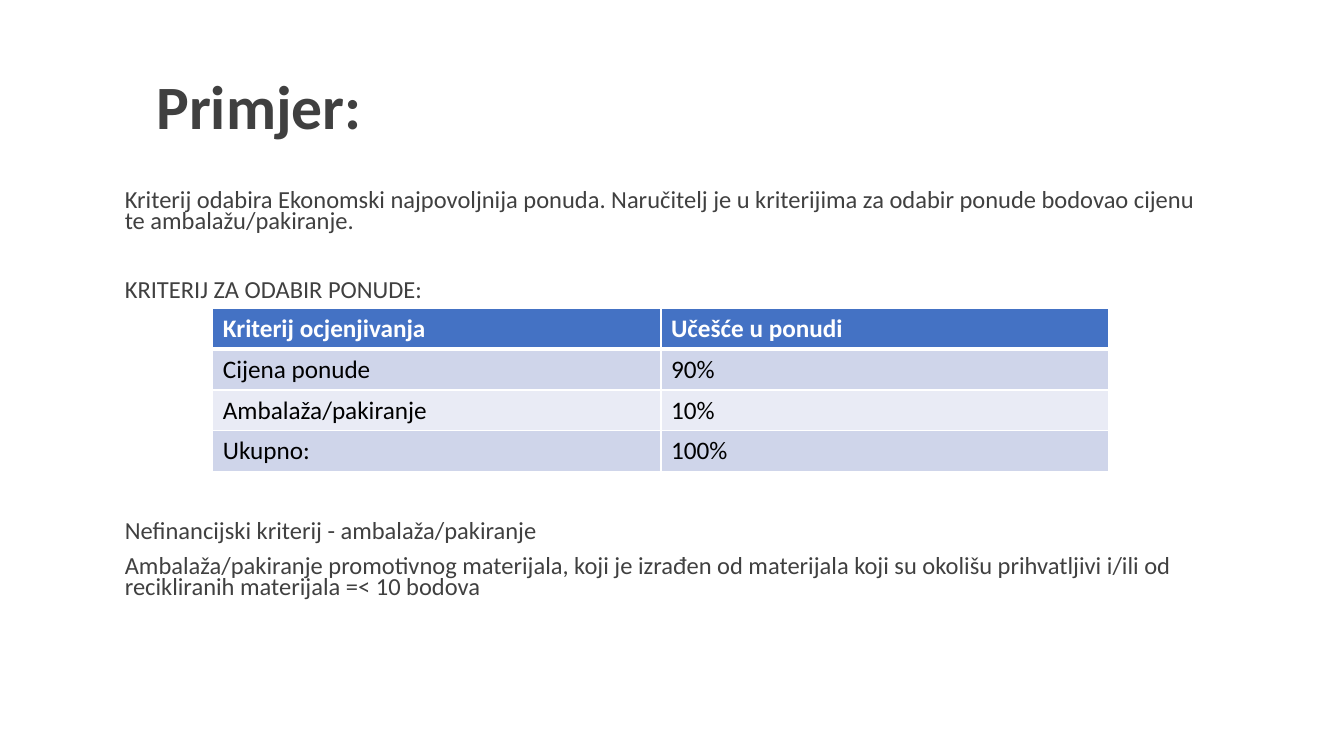
from dataclasses import dataclass

from lxml.etree import SubElement
from pptx import Presentation
from pptx.dml.color import RGBColor as Color
from pptx.enum.text import MSO_ANCHOR as Anchor, MSO_AUTO_SIZE as AutoSize, PP_ALIGN as Align
from pptx.oxml.ns import qn
from pptx.util import Inches, Pt


@dataclass(frozen=True)
class Theme:
    font: str = "Calibri"
    ink: str = "404040"
    table_ink: str = "000000"
    white: str = "FFFFFF"
    header: str = "4472C4"
    bands: tuple = ("CFD5EA", "E9EBF5")
    title_size: float = 44
    body_size: float = 17.5
    table_size: float = 18
    thin: float = 1
    thick: float = 3


def apply_format(target, values):
    for name, value in values.items():
        setattr(target, name, value)


class SlideBuilder:
    def __init__(self, deck, theme):
        self.deck = deck
        self.theme = theme
        self.page = deck.slides.add_slide(deck.slide_layouts[5])

    def area(self, left, top, width, height):
        """Turn percentages of the slide's size into lengths."""
        wide, high = self.deck.slide_width, self.deck.slide_height
        shares = zip((left, top, width, height), (wide, high, wide, high))
        return [round(share * side / 100) for share, side in shares]

    def add_text(self, para, text, size, color, bold=False, **layout):
        apply_format(para, {"alignment": Align.LEFT, **layout})
        span = para.add_run()
        span.text = text
        apply_format(span.font, {"name": self.theme.font, "size": Pt(size), "bold": bold})
        span.font.color.rgb = Color.from_string(color)

    def title(self, text, *shares):
        box = self.page.shapes.title
        apply_format(box, dict(zip(("left", "top", "width", "height"), self.area(*shares))))
        frame = box.text_frame
        apply_format(frame, {"vertical_anchor": Anchor.MIDDLE, "word_wrap": True,
                             "auto_size": AutoSize.NONE})
        self.add_text(frame.paragraphs[0], text, self.theme.title_size, self.theme.ink,
                      bold=True, line_spacing=0.9)

    def body(self, entries, *shares):
        """Place (space before in points, text) entries in one text box."""
        frame = self.page.shapes.add_textbox(*self.area(*shares)).text_frame
        frame.word_wrap = True
        for index, (gap, text) in enumerate(entries):
            para = frame.add_paragraph() if index else frame.paragraphs[0]
            self.add_text(para, text, self.theme.body_size, self.theme.ink,
                          line_spacing=0.7, space_before=Pt(gap))

    def borders(self, cell, top, bottom):
        properties = cell._tc.get_or_add_tcPr()
        thin = self.theme.thin
        for side, width in (("L", thin), ("R", thin), ("T", top), ("B", bottom)):
            line = SubElement(properties, qn(f"a:ln{side}"), w=str(Pt(width)))
            fill = SubElement(line, qn("a:solidFill"))
            SubElement(fill, qn("a:srgbClr"), val=self.theme.white)

    def table(self, rows, *shares):
        theme = self.theme
        left, top, width, height = self.area(*shares)
        grid = self.page.shapes.add_table(len(rows), len(rows[0]), left, top, width, height).table
        grid.horz_banding = False
        for row, texts in enumerate(rows):
            is_header = row == 0
            fill = theme.header if is_header else theme.bands[(row - 1) % len(theme.bands)]
            for column, text in enumerate(texts):
                cell = grid.cell(row, column)
                self.borders(cell, theme.thick if row == 1 else theme.thin,
                             theme.thick if is_header else theme.thin)
                cell.fill.solid()
                cell.fill.fore_color.rgb = Color.from_string(fill)
                self.add_text(cell.text_frame.paragraphs[0], text, theme.table_size,
                              theme.white if is_header else theme.table_ink, bold=is_header)


def main():
    deck = Presentation()
    apply_format(deck, {"slide_width": Inches(13.33), "slide_height": Inches(7.5)})
    slide = SlideBuilder(deck, Theme())
    slide.title("Primjer:", 10.88, 7.2, 78.24, 14.53)
    slide.body([
        (0, "Kriterij odabira Ekonomski najpovoljnija ponuda. Naručitelj je u kriterijima "
            "za odabir ponude bodovao cijenu te ambalažu/pakiranje."),
        (34.5, "KRITERIJ ZA ODABIR PONUDE:"),
        (158, "Nefinancijski kriterij - ambalaža/pakiranje"),
        (10, "Ambalaža/pakiranje promotivnog materijala, koji je izrađen od materijala "
             "koji su okolišu prihvatljivi i/ili od recikliranih materijala =< 10 bodova"),
    ], 8.55, 24.8, 82.9, 58.53)
    slide.table([
        ("Kriterij ocjenjivanja", "Učešće u ponudi"),
        ("Cijena ponude", "90%"),
        ("Ambalaža/pakiranje", "10%"),
        ("Ukupno:", "100%"),
    ], 15.83, 40.8, 66.69, 21.6)
    deck.save("out.pptx")


if __name__ == "__main__":
    main()
